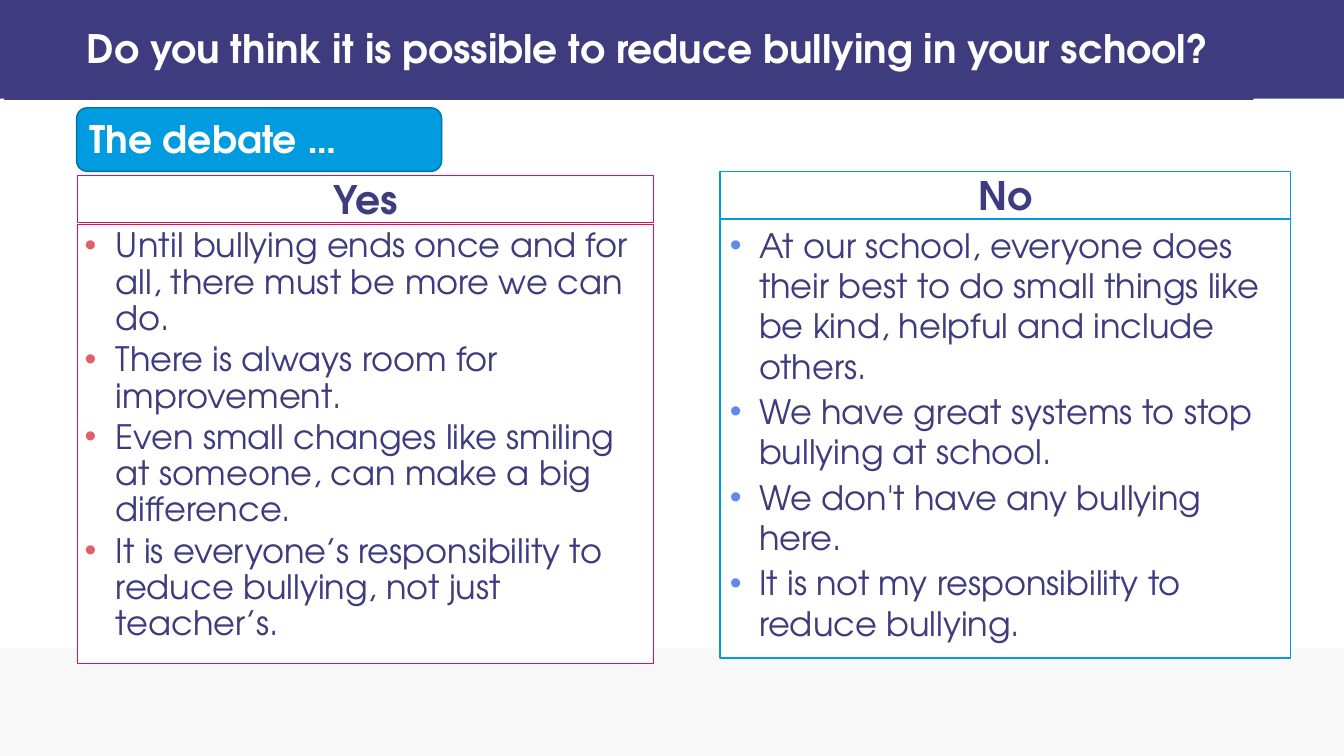
from lxml.etree import SubElement
from pptx import Presentation
from pptx.dml.color import RGBColor
from pptx.enum.shapes import MSO_SHAPE as Shape
from pptx.enum.text import MSO_ANCHOR as Anchor, MSO_AUTO_SIZE as AutoSize, PP_ALIGN as Align
from pptx.oxml.ns import qn
from pptx.util import Inches, Pt

FONT = "TeX Gyre Adventor"
INDIGO, WHITE = "3E3B7E", "FFFFFF"
PINK, BLUE = "E10C61", "019CDF"
YES_POINTS = [
    "Until bullying ends once and for all, there must be more we can do.",
    "There is always room for improvement.",
    "Even small changes like smiling at someone, can make a big difference.",
    "It is everyone’s responsibility to reduce bullying, not just teacher’s.",
]
NO_POINTS = [
    "At our school, everyone does their best to do small things like be kind, helpful and include others.",
    "We have great systems to stop bullying at school.",
    "We don't have any bullying here.",
    "It is not my responsibility to reduce bullying.",
]


def paint(color_format, color):
    """Set a solid colour from a hex string."""
    color_format.rgb = RGBColor.from_string(color)


def add_box(slide, kind, left, top, width, height, fill, line=None):
    """Add a flat preset shape, outlined when a line colour is given."""
    shape = slide.shapes.add_shape(kind, Inches(left), Inches(top), Inches(width), Inches(height))
    shape.shadow.inherit = False
    shape.fill.solid()
    paint(shape.fill.fore_color, fill)
    if line:
        paint(shape.line.color, line)
        shape.line.width = Pt(1)
    else:
        shape.line.fill.background()
    return shape


def set_insets(text_frame, horizontal, vertical):
    """Set the four text margins in inches."""
    text_frame.margin_left = text_frame.margin_right = Inches(horizontal)
    text_frame.margin_top = text_frame.margin_bottom = Inches(vertical)


def format_paragraph(paragraph, size, color, bold=False, align=Align.LEFT):
    """Format a paragraph and its runs."""
    paragraph.alignment = align
    for run in paragraph.runs:
        run.font.name = FONT
        run.font.size = Pt(size)
        run.font.bold = bold
        paint(run.font.color, color)


def add_bullet(paragraph, color, indent):
    """Give a paragraph a coloured hanging bullet."""
    properties = paragraph._p.get_or_add_pPr()
    properties.set("marL", str(Inches(indent)))
    properties.set("indent", str(-Inches(indent)))
    bullet_color = SubElement(properties, qn("a:buClr"))
    SubElement(bullet_color, qn("a:srgbClr"), val=color)
    SubElement(properties, qn("a:buFont"), typeface="Arial")
    SubElement(properties, qn("a:buChar"), char="•")


def add_background(slide):
    """Draw the header band and the pale footer."""
    for left, width in ((1.2, 11.69), (0.04, 1.79)):
        slant = add_box(slide, Shape.PARALLELOGRAM, left, 0, width, 0.99, INDIGO)
        slant.adjustments[0] = 0.465
    for left, width in ((11.54, 1.79), (0, 0.69)):
        add_box(slide, Shape.RECTANGLE, left, 0, width, 0.98, INDIGO)
    add_box(slide, Shape.RECTANGLE, 0, 6.43, 13.33, 1.07, "F8F8F8")


def set_title(slide, text):
    """Place the title in front of the header band."""
    title = slide.shapes.title
    title.element.getparent().append(title.element)
    title.left, title.top = Inches(0.79), Inches(0.01)
    title.width, title.height = Inches(12.26), Inches(0.98)
    frame = title.text_frame
    frame.text = text
    frame.auto_size = AutoSize.NONE
    frame.vertical_anchor = Anchor.MIDDLE
    set_insets(frame, 0.07, 0.04)
    frame.paragraphs[0].line_spacing = 0.9
    format_paragraph(frame.paragraphs[0], 28, WHITE, bold=True)


def add_column(slide, left, top, width, heading, points, line, bullet, indent, gap, spacing, insets):
    """Add one side of the debate: a heading box over a list box."""
    header = add_box(slide, Shape.RECTANGLE, left, top, width, 0.47, WHITE, line)
    header.text_frame.text = heading
    header.text_frame.vertical_anchor = Anchor.MIDDLE
    format_paragraph(header.text_frame.paragraphs[0], 28, INDIGO, bold=True, align=Align.CENTER)

    body = add_box(slide, Shape.RECTANGLE, left, top + gap, width, 4.35, WHITE, line)
    frame = body.text_frame
    frame.word_wrap = True
    frame.vertical_anchor = Anchor.TOP
    set_insets(frame, *insets)
    frame.text = "\n".join(points)
    for index, paragraph in enumerate(frame.paragraphs):
        add_bullet(paragraph, bullet, indent)
        paragraph.line_spacing = spacing
        if index:
            paragraph.space_before = Pt(3.6)
        format_paragraph(paragraph, 24, INDIGO)


def add_label(slide, text):
    """Add the rounded debate label."""
    label = add_box(slide, Shape.ROUNDED_RECTANGLE, 0.76, 1.07, 3.62, 0.63, BLUE, "0173A5")
    frame = label.text_frame
    frame.text = text
    frame.word_wrap = True
    frame.vertical_anchor = Anchor.TOP
    frame.auto_size = AutoSize.SHAPE_TO_FIT_TEXT
    format_paragraph(frame.paragraphs[0], 27, WHITE, bold=True)


def main():
    """Build and save the debate slide."""
    presentation = Presentation()
    presentation.slide_width, presentation.slide_height = Inches(13.33), Inches(7.5)
    slide = presentation.slides.add_slide(presentation.slide_layouts[5])
    add_background(slide)
    set_title(slide, "Do you think it is possible to reduce bullying in your school?")
    add_column(slide, 0.77, 1.74, 5.71, "Yes", YES_POINTS, PINK, "DF6068",
               indent=0.31, gap=0.49, spacing=0.9, insets=(0.07, 0.04))
    add_column(slide, 7.14, 1.7, 5.66, "No", NO_POINTS, BLUE, "6088EF",
               indent=0.29, gap=0.48, spacing=1.0, insets=(0.1, 0.05))
    add_label(slide, "The debate …")
    presentation.save("out.pptx")


if __name__ == "__main__":
    main()
